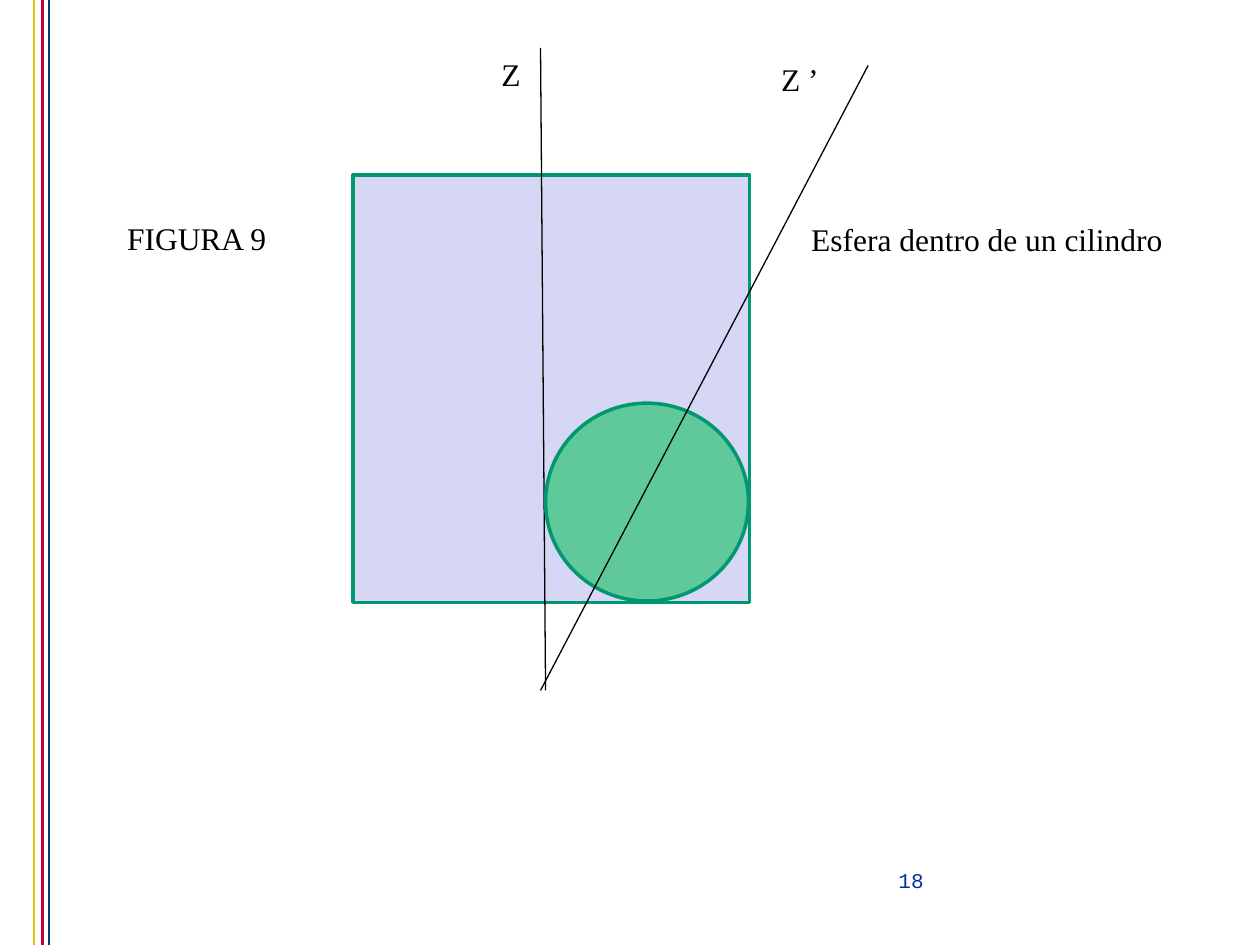
from lxml import etree
from pptx import Presentation
from pptx.dml.color import RGBColor
from pptx.enum.shapes import MSO_CONNECTOR, MSO_SHAPE
from pptx.enum.text import PP_ALIGN
from pptx.oxml.ns import qn
from pptx.util import Inches, Pt

RECT, OVAL = MSO_SHAPE.RECTANGLE, MSO_SHAPE.OVAL
LEFT, MID = PP_ALIGN.LEFT, PP_ALIGN.CENTER
BLACK = RGBColor(0x00, 0x00, 0x00)
BLUE = RGBColor(0x00, 0x33, 0x99)
GOLD = RGBColor(0xEB, 0xBD, 0x00)
RED = RGBColor(0xC1, 0x00, 0x3D)
NAVY = RGBColor(0x00, 0x3F, 0x6D)
LILAC = RGBColor(0xD6, 0xD6, 0xF5)
MINT = RGBColor(0x60, 0xC9, 0x9C)
GREEN = RGBColor(0x00, 0x97, 0x71)

deck = Presentation()
deck.slide_width, deck.slide_height = Inches(10), Inches(7.5)
COL, ROW = deck.slide_width / 100, deck.slide_height / 75
slide = deck.slides.add_slide(deck.slide_layouts[6])
shapes = slide.shapes


def write(text, x, y, w, h=4, size=18, font="Times New Roman", color=BLACK, align=LEFT):
    box = shapes.add_textbox(int(x * COL), int(y * ROW), int(w * COL), int(h * ROW))
    box.text_frame.word_wrap = True
    para = box.text_frame.paragraphs[0]
    para.text = text
    para.alignment = align
    para.font.size = Pt(size)
    para.font.name = font
    para.font.color.rgb = color


def rule(x1, y1, x2, y2, color=BLACK, width=0.75):
    line = shapes.add_connector(
        MSO_CONNECTOR.STRAIGHT, int(x1 * COL), int(y1 * ROW), int(x2 * COL), int(y2 * ROW)
    )
    line.line.color.rgb = color
    line.line.width = Pt(width)
    etree.SubElement(line._element.spPr, qn("a:effectLst"))


write("18", 69.4, 68.4, 5.8, 2.7, size=12, font="Courier New", color=BLUE, align=MID)

for x, color in ((2.7, GOLD), (3.4, RED), (3.9, NAVY)):
    rule(x, 0, x, 75, color=color, width=1.5)

solids = (
    (RECT, 28, 13.9, 31.5, 33.9, LILAC, (42.9, 3.8, 43.3, 54.8)),
    (OVAL, 43.3, 32, 16.1, 15.7, MINT, (68.9, 5.2, 42.9, 54.8)),
)
for kind, x, y, w, h, color, axis in solids:
    solid = shapes.add_shape(kind, int(x * COL), int(y * ROW), int(w * COL), int(h * ROW))
    solid.shadow.inherit = False
    solid.fill.solid()
    solid.fill.fore_color.rgb = color
    solid.line.color.rgb = GREEN
    solid.line.width = Pt(2)
    rule(*axis)

write("Esfera dentro de un cilindro", 63.4, 17, 30, 7.1)
write("Z", 38.8, 3.9, 10.2)
write("Z ’", 61, 4.3, 10.2)
write("FIGURA 9", 9.1, 16.9, 18.9)

deck.save("out.pptx")
